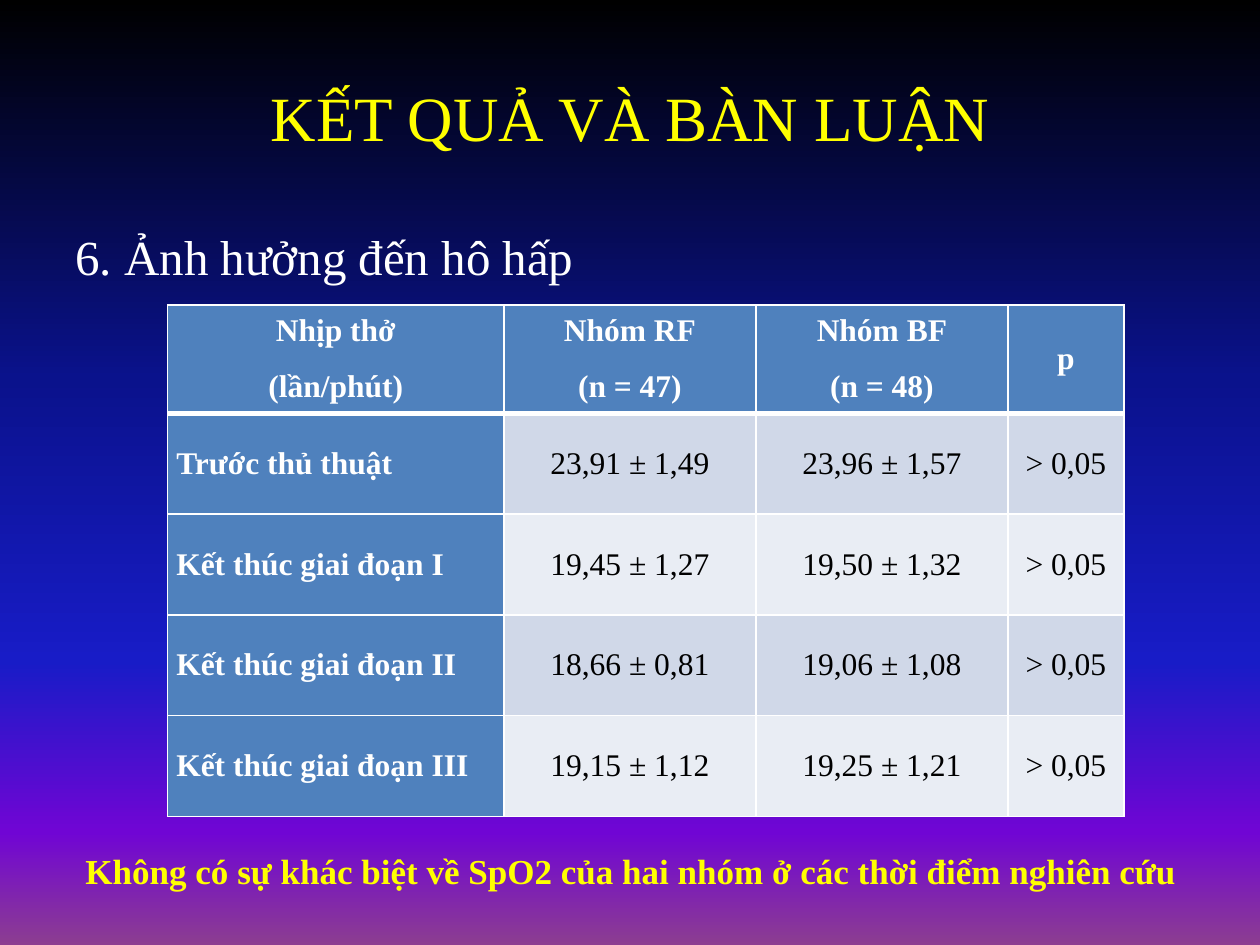
from lxml.etree import SubElement
from pptx import Presentation
from pptx.dml.color import RGBColor
from pptx.enum.text import MSO_ANCHOR, PP_ALIGN
from pptx.oxml.ns import qn
from pptx.util import Inches, Pt

TITLE = "KẾT QUẢ VÀ BÀN LUẬN"
HEADING = "6. Ảnh hưởng đến hô hấp"
CONCLUSION = "Không có sự khác biệt về SpO2 của hai nhóm ở các thời điểm nghiên cứu"
ROWS = [
    ("Nhịp thở\n(lần/phút)", "Nhóm RF\n(n = 47)", "Nhóm BF\n(n = 48)", "p"),
    ("Trước thủ thuật", "23,91 ± 1,49", "23,96 ± 1,57", "> 0,05"),
    ("Kết thúc giai đoạn I", "19,45 ± 1,27", "19,50 ± 1,32", "> 0,05"),
    ("Kết thúc giai đoạn II", "18,66 ± 0,81", "19,06 ± 1,08", "> 0,05"),
    ("Kết thúc giai đoạn III", "19,15 ± 1,12", "19,25 ± 1,21", "> 0,05"),
]
COL_WIDTHS = [2.67, 2, 2, 0.92]
ROW_HEIGHTS = [0.86] + [0.8] * 4

FONT = "Times New Roman"
WHITE = RGBColor(0xFF, 0xFF, 0xFF)
BLACK = RGBColor(0x00, 0x00, 0x00)
YELLOW = RGBColor(0xFF, 0xFF, 0x00)
BLUE = RGBColor(0x4F, 0x81, 0xBD)
BANDS = [RGBColor(0xE9, 0xED, 0xF4), RGBColor(0xD0, 0xD8, 0xE8)]
GRADIENT = [
    (0, BLACK),
    (40, RGBColor(0x0A, 0x12, 0x8C)),
    (70, RGBColor(0x18, 0x1C, 0xC7)),
    (88, RGBColor(0x70, 0x05, 0xD4)),
    (100, RGBColor(0x8C, 0x3D, 0x91)),
]


def set_background(s):
    s.background.fill.gradient()
    grad = s.element.find(".//" + qn("a:gradFill"))
    stops = grad.find(qn("a:gsLst"))
    for stop in list(stops):
        stops.remove(stop)
    for position, color in GRADIENT:
        stop = SubElement(stops, qn("a:gs"), pos=str(position * 1000))
        SubElement(stop, qn("a:srgbClr"), val=str(color))
    grad.find(qn("a:lin")).set("ang", "5400000")


def style(tf, size, color, bold, align, before=0):
    for p in tf.paragraphs:
        p.alignment = align
        p.space_before = Pt(before)
        for r in p.runs:
            r.font.name = FONT
            r.font.size = Pt(size)
            r.font.bold = bold
            r.font.color.rgb = color


def add_text(s, box, text, size, color, bold=False, align=PP_ALIGN.LEFT,
             anchor=MSO_ANCHOR.TOP, before=0):
    tf = s.shapes.add_textbox(*map(Inches, box)).text_frame
    tf.word_wrap = True
    tf.vertical_anchor = anchor
    tf.text = text
    style(tf, size, color, bold, align, before)


def set_borders(cell, widths):
    tcPr = cell._tc.get_or_add_tcPr()
    for i, (side, width) in enumerate(widths.items()):
        ln = SubElement(tcPr, qn(f"a:ln{side}"), w=str(Pt(width)))
        fill = SubElement(ln, qn("a:solidFill"))
        SubElement(fill, qn("a:srgbClr"), val=str(WHITE))
        tcPr.insert(i, ln)


def add_results_table(s):
    size = (sum(COL_WIDTHS), sum(ROW_HEIGHTS))
    table = s.shapes.add_table(len(ROWS), len(COL_WIDTHS), Inches(1.33), Inches(2.42),
                               *map(Inches, size)).table
    table.first_col = True
    for column, width in zip(table.columns, COL_WIDTHS):
        column.width = Inches(width)
    for row, height in zip(table.rows, ROW_HEIGHTS):
        row.height = Inches(height)
    for i, values in enumerate(ROWS):
        for j, value in enumerate(values):
            cell = table.cell(i, j)
            header = i == 0 or j == 0
            cell.text = value
            cell.vertical_anchor = MSO_ANCHOR.MIDDLE
            cell.margin_left = cell.margin_right = Inches(0.07)
            cell.margin_top = cell.margin_bottom = 0
            cell.fill.solid()
            cell.fill.fore_color.rgb = BLUE if header else BANDS[i % 2]
            align = PP_ALIGN.JUSTIFY if i and j == 0 else PP_ALIGN.CENTER
            style(cell.text_frame, 18, WHITE if header else BLACK, header, align, 12)
            set_borders(cell, {"L": 1, "R": 1, "T": 3 if i == 1 else 1,
                               "B": 3 if i == 0 else 1})


def main():
    prs = Presentation()
    prs.slide_width, prs.slide_height = Inches(10), Inches(7.5)
    s = prs.slides.add_slide(prs.slide_layouts[6])
    set_background(s)
    add_text(s, (0.5, 0.3, 9, 1.25), TITLE, 36, YELLOW,
             align=PP_ALIGN.CENTER, anchor=MSO_ANCHOR.MIDDLE)
    add_text(s, (0.5, 1.75, 9, 4.95), HEADING, 28, WHITE, before=5.6)
    add_results_table(s)
    add_text(s, (0.58, 6.69, 9.08, 0.44), CONCLUSION, 20, YELLOW, bold=True)
    prs.save("out.pptx")


if __name__ == "__main__":
    main()
